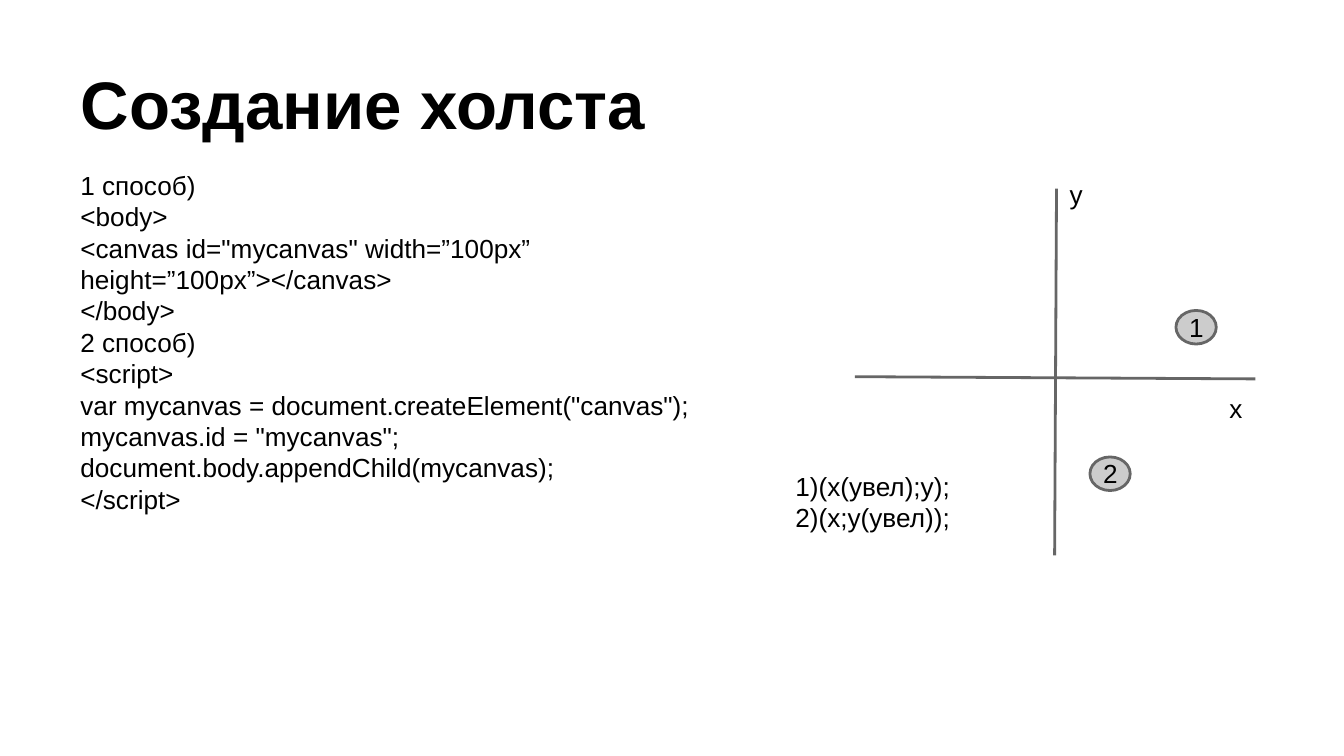
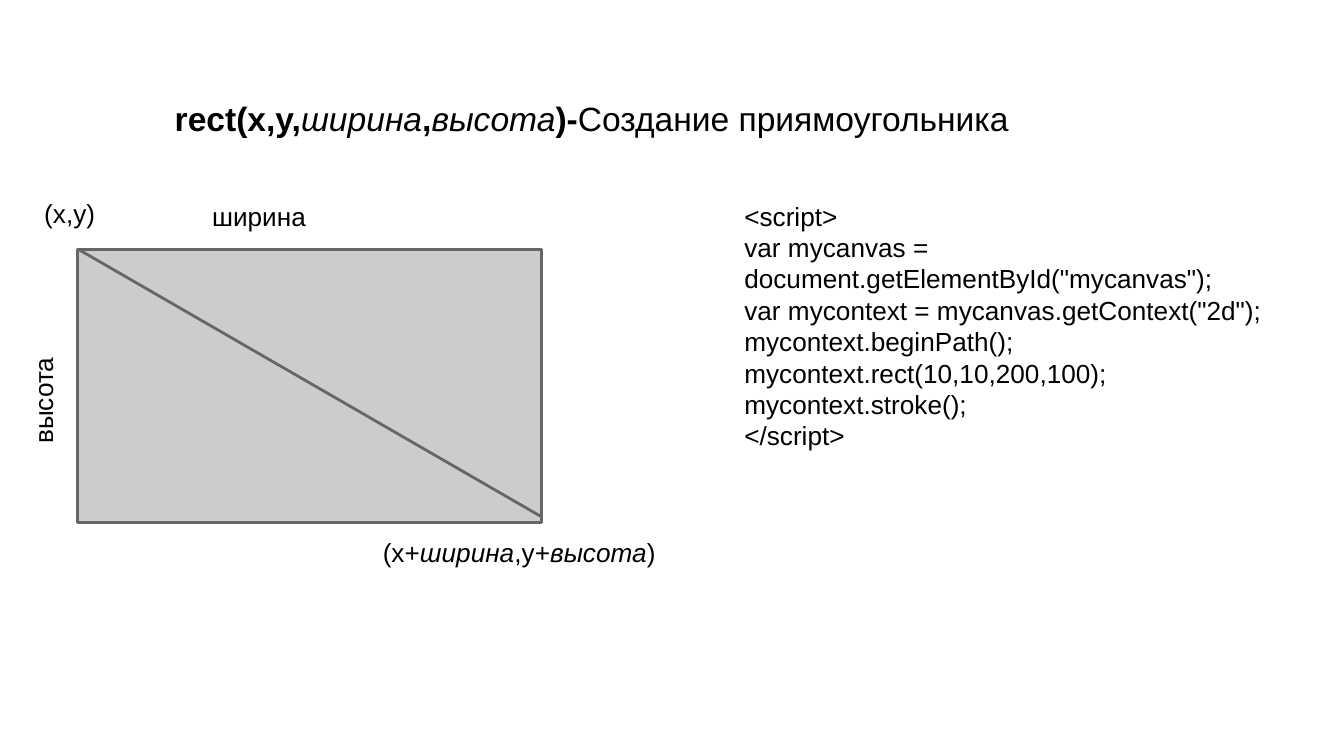
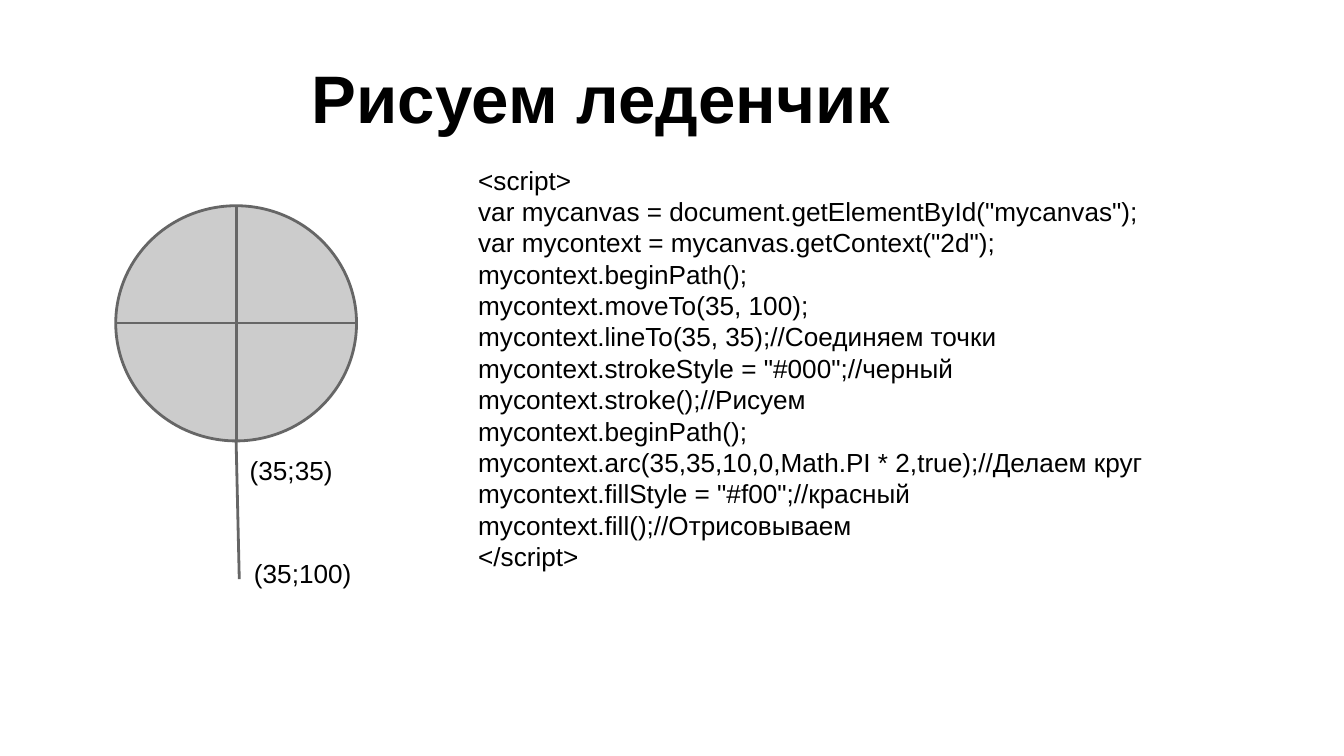
from lxml.etree import SubElement
from pptx import Presentation
from pptx.dml.color import RGBColor
from pptx.enum.shapes import MSO_CONNECTOR, MSO_SHAPE
from pptx.enum.text import MSO_ANCHOR, MSO_AUTO_SIZE, PP_ALIGN
from pptx.oxml.ns import qn
from pptx.util import Pt

BLACK = RGBColor(0x00, 0x00, 0x00)
GRAY = RGBColor(0x66, 0x66, 0x66)
LIGHT_GRAY = RGBColor(0xCC, 0xCC, 0xCC)
FONT = "Arial"
INSET = Pt(7.2)
TEXT_SIZE = 14
LINE_PITCH = Pt(16.8)


def place_text(shape, box, paragraphs, size=TEXT_SIZE, anchor=MSO_ANCHOR.TOP):
    """Place a shape and fill it; each paragraph is a list of (text, style) runs."""
    shape.left, shape.top, shape.width, shape.height = map(Pt, box)
    frame = shape.text_frame
    frame.word_wrap = True
    frame.auto_size = MSO_AUTO_SIZE.NONE
    frame.vertical_anchor = anchor
    frame.margin_left = frame.margin_right = INSET
    frame.margin_top = frame.margin_bottom = INSET
    frame.text = "\n".join("" for _ in paragraphs)
    for paragraph, runs in zip(frame.paragraphs, paragraphs):
        paragraph.alignment = PP_ALIGN.LEFT
        if size == TEXT_SIZE:
            paragraph.line_spacing = LINE_PITCH
        for text, style in runs:
            run = paragraph.add_run()
            run.text = text
            run.font.name = FONT
            run.font.size = Pt(size)
            run.font.color.rgb = BLACK
            run.font.bold = style == "bold"
            run.font.italic = style == "italic"


def style_outline(shape):
    shape.line.color.rgb = GRAY
    shape.line.width = Pt(1.5)


presentation = Presentation()
presentation.slide_width = Pt(720)
presentation.slide_height = Pt(405)
title_only = presentation.slide_layouts[5]

canvas_code = """1 способ)
<body>
<canvas id="mycanvas" width=”100px” height=”100px”></canvas>
</body>
2 способ)
<script>
var mycanvas = document.createElement("canvas");
mycanvas.id = "mycanvas";
document.body.appendChild(mycanvas);
</script>"""

rectangle_code = """<script>
var mycanvas = document.getElementById("mycanvas");
var mycontext = mycanvas.getContext("2d");
mycontext.beginPath();
mycontext.rect(10,10,200,100);
mycontext.stroke();
</script>"""

lollipop_code = """<script>
var mycanvas = document.getElementById("mycanvas");
var mycontext = mycanvas.getContext("2d");
mycontext.beginPath();
mycontext.moveTo(35, 100);
mycontext.lineTo(35, 35);//Соединяем точки
mycontext.strokeStyle = "#000";//черный
mycontext.stroke();//Рисуем
mycontext.beginPath();
mycontext.arc(35,35,10,0,Math.PI * 2,true);//Делаем круг
mycontext.fillStyle = "#f00";//красный
mycontext.fill();//Отрисовываем
</script>"""

# Boxes are left, top, width, height; lines are start x, start y, end x, end y.
slides = [
    {
        "title": [("Создание холста", "bold")],
        "title_box": (36, 16.5, 648, 67.5),
        "title_size": 36,
        "code": canvas_code,
        "code_box": (36, 83.5, 395.5, 293),
        "code_inset": 7.2,
        "figures": [
            (MSO_SHAPE.OVAL, (630, 166.3, 21.6, 18)),
            (MSO_SHAPE.OVAL, (583.9, 244.8, 21.6, 18)),
        ],
        "lines": [(458, 201.8, 672.5, 203), (566, 101, 565, 297.5)],
        "labels": [
            ("y", (566, 88.6, 56, 24.5)),
            ("x", (651.6, 203, 21.6, 24.5)),
            ("1", (630, 159.8, 21.6, 18)),
            ("2", (583.9, 237.6, 21.6, 24.5)),
            ("1)(x(увел);y);\n2)(x;y(увел));", (419, 244.8, 116.6, 59.8)),
        ],
    },
    {
        "title": [
            ("rect(x,y,", "bold"), ("ширина", "italic"), (",", "bold"),
            ("высота", "italic"), (")-", "bold"),
            ("Создание приямоугольника", "plain"),
        ],
        "title_box": (86.4, 13.7, 547.2, 67.7),
        "title_size": 18,
        "code": rectangle_code,
        "code_box": (391.7, 100, 293, 224),
        "code_inset": 7.2,
        "figures": [(MSO_SHAPE.RECTANGLE, (41.6, 133.9, 248.4, 146.2))],
        "lines": [(42.5, 133.9, 289.5, 276.5)],
        "labels": [
            ("(x,y)", (16.6, 98.6, 49.7, 28.8)),
            ("ширина", (106.5, 100, 80.6, 27.4)),
        ],
    },
    {
        "title": [("Рисуем леденчик", "bold")],
        "title_box": (159.8, 13, 399.6, 67.7),
        "title_size": 36,
        "code": lollipop_code,
        "code_box": (241.2, 80.6, 449.3, 303),
        "code_inset": 15,
        "figures": [(MSO_SHAPE.OVAL, (62, 110.2, 129, 126))],
        "lines": [
            (126.5, 110.2, 126.5, 236.2),
            (191, 173, 62, 173),
            (126.5, 236.2, 128.2, 310.3),
        ],
        "labels": [
            ("(35;35)", (126.7, 236.2, 84.2, 29.5)),
            ("(35;100)", (129, 291, 79.2, 32)),
        ],
    },
]

for content in slides:
    slide = presentation.slides.add_slide(title_only)
    place_text(slide.shapes.title, content["title_box"], [content["title"]],
               content["title_size"], MSO_ANCHOR.BOTTOM)

    code = slide.shapes.add_textbox(0, 0, 0, 0)
    place_text(code, content["code_box"],
               [[(line, "plain")] for line in content["code"].split("\n")])
    code.text_frame.margin_left = Pt(content["code_inset"])

    for preset, box in content["figures"]:
        figure = slide.shapes.add_shape(preset, *map(Pt, box))
        figure.shadow.inherit = False
        figure.fill.solid()
        figure.fill.fore_color.rgb = LIGHT_GRAY
        style_outline(figure)

    for ends in content["lines"]:
        connector = slide.shapes.add_connector(MSO_CONNECTOR.STRAIGHT, *map(Pt, ends))
        style_outline(connector)
        SubElement(connector._element.spPr, qn("a:effectLst"))

    for text, box in content["labels"]:
        label = slide.shapes.add_textbox(0, 0, 0, 0)
        anchor = MSO_ANCHOR.MIDDLE if text == "(35;100)" else MSO_ANCHOR.TOP
        place_text(label, box, [[(line, "plain")] for line in text.split("\n")],
                   anchor=anchor)

rectangle_slide = presentation.slides[1]
height_label = rectangle_slide.shapes.add_textbox(0, 0, 0, 0)
place_text(height_label, (-33.8, 175, 110.9, 28.8), [[("высота", "plain")]])
height_label.rotation = 270

corner_label = rectangle_slide.shapes.add_textbox(0, 0, 0, 0)
place_text(corner_label, (198, 280, 194.4, 30.2), [[
    ("(x+", "plain"), ("ширина", "italic"), (",y+", "plain"),
    ("высота", "italic"), (")", "plain"),
]])

presentation.save("out.pptx")
